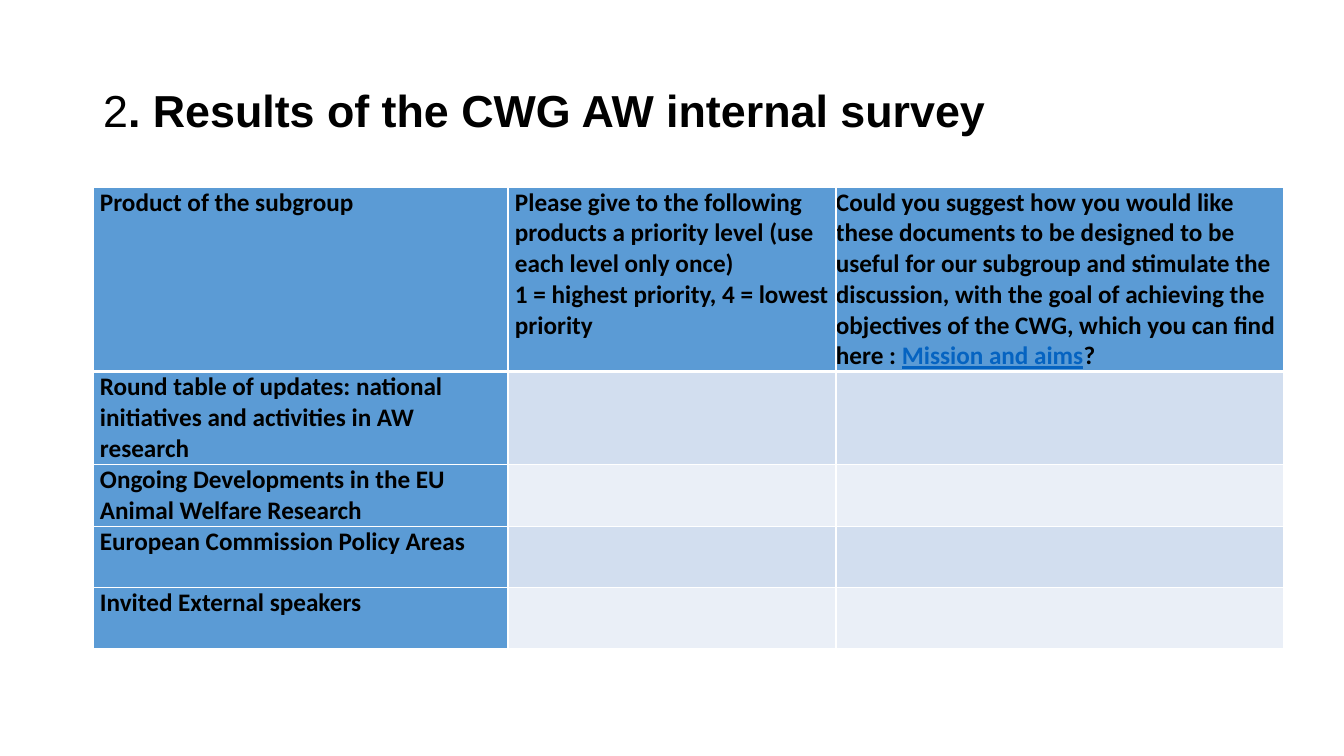
"""Build the survey results slide with its priority table."""
from lxml import etree
from pptx import Presentation
from pptx import util as u
from pptx.dml.color import RGBColor
from pptx.enum import text
from pptx.oxml.ns import qn

BLACK, WHITE, LINK = "000000", "FFFFFF", "0563C1"
HEADER_FILL, BAND_FILLS = "5B9BD5", ("D2DEEF", "EAEFF7")
TITLE = [("2", False), (". Results of the CWG AW internal survey", True)]
LINK_TEXT = "Mission and aims"
HEADERS = [
    [["Product of the subgroup"]],
    [["Please give to the following products a priority level (use each level only once)"],
     ["1 = highest priority, 4 = lowest priority"]],
    [["Could you suggest how you would like these documents to be designed to be useful "
      "for our subgroup and stimulate the discussion, with the goal of achieving the "
      "objectives of the CWG, which you can find here : ", LINK_TEXT, "?"]],
]
PRODUCTS = [
    "Round table of updates: national initiatives and activities in AW research",
    "Ongoing Developments in the EU Animal Welfare Research",
    "European Commission Policy Areas",
    "Invited External speakers",
]
SLIDE_SIZE = (1344, 756)
TITLE_BOX = (93, 40, 1159, 146)
TABLE_ORIGIN = (93, 187)
COLUMN_WIDTHS = (415, 328, 448)
ROW_HEIGHTS = (184, 93, 61, 61, 61)
CELL_MARGINS = (7, 7, 0)


def px(length):
    return u.Emu(round(length * 914400 / 100.8))


def color(value):
    return RGBColor.from_string(value)


def style(span, font, size, bold, shade=BLACK):
    span.font.name, span.font.size, span.font.bold = font, u.Pt(size), bold
    span.font.color.rgb = color(shade)


def add_title(page):
    box = page.shapes.title
    box.left, box.top, box.width, box.height = map(px, TITLE_BOX)
    box.text_frame.vertical_anchor = text.MSO_ANCHOR.MIDDLE
    para = box.text_frame.paragraphs[0]
    para.alignment, para.line_spacing = text.PP_ALIGN.LEFT, 0.9
    for words, bold in TITLE:
        span = para.add_run()
        span.text = words
        style(span, "Arial", 32, bold)


def add_borders(cell, top, bottom):
    properties = cell._tc.get_or_add_tcPr()
    for side, points in (("L", 1), ("R", 1), ("T", top), ("B", bottom)):
        line = etree.SubElement(properties, qn(f"a:ln{side}"), w=str(u.Pt(points)))
        fill = etree.SubElement(line, qn("a:solidFill"))
        etree.SubElement(fill, qn("a:srgbClr"), val=WHITE)


def fill_text(cell, paragraphs, margin):
    cell.margin_left = cell.margin_right = px(margin)
    cell.margin_top = cell.margin_bottom = 0
    frame = cell.text_frame
    for index, pieces in enumerate(paragraphs):
        para = frame.add_paragraph() if index else frame.paragraphs[0]
        for words in pieces:
            span = para.add_run()
            span.text = words
            linked = words == LINK_TEXT
            style(span, "Calibri", 18, True, LINK if linked else BLACK)
            if linked:
                span.font.underline = True


def add_survey_table(page):
    rows = [HEADERS] + [[[[product]], [], []] for product in PRODUCTS]
    size = (sum(COLUMN_WIDTHS), sum(ROW_HEIGHTS))
    table = page.shapes.add_table(len(rows), len(COLUMN_WIDTHS),
                                  *map(px, TABLE_ORIGIN + size)).table
    for column, width in zip(table.columns, COLUMN_WIDTHS):
        column.width = px(width)
    for row, height in zip(table.rows, ROW_HEIGHTS):
        row.height = px(height)
    for r, contents in enumerate(rows):
        for c, paragraphs in enumerate(contents):
            cell = table.cell(r, c)
            add_borders(cell, 3 if r == 1 else 1, 3 if r == 0 else 1)
            cell.fill.solid()
            is_header = r == 0 or c == 0
            cell.fill.fore_color.rgb = color(HEADER_FILL if is_header else BAND_FILLS[(r - 1) % 2])
            if paragraphs:
                fill_text(cell, paragraphs, CELL_MARGINS[c])


def main():
    deck = Presentation()
    deck.slide_width, deck.slide_height = map(px, SLIDE_SIZE)
    page = deck.slides.add_slide(deck.slide_layouts[5])
    add_title(page)
    add_survey_table(page)
    deck.save("out.pptx")


if __name__ == "__main__":
    main()
